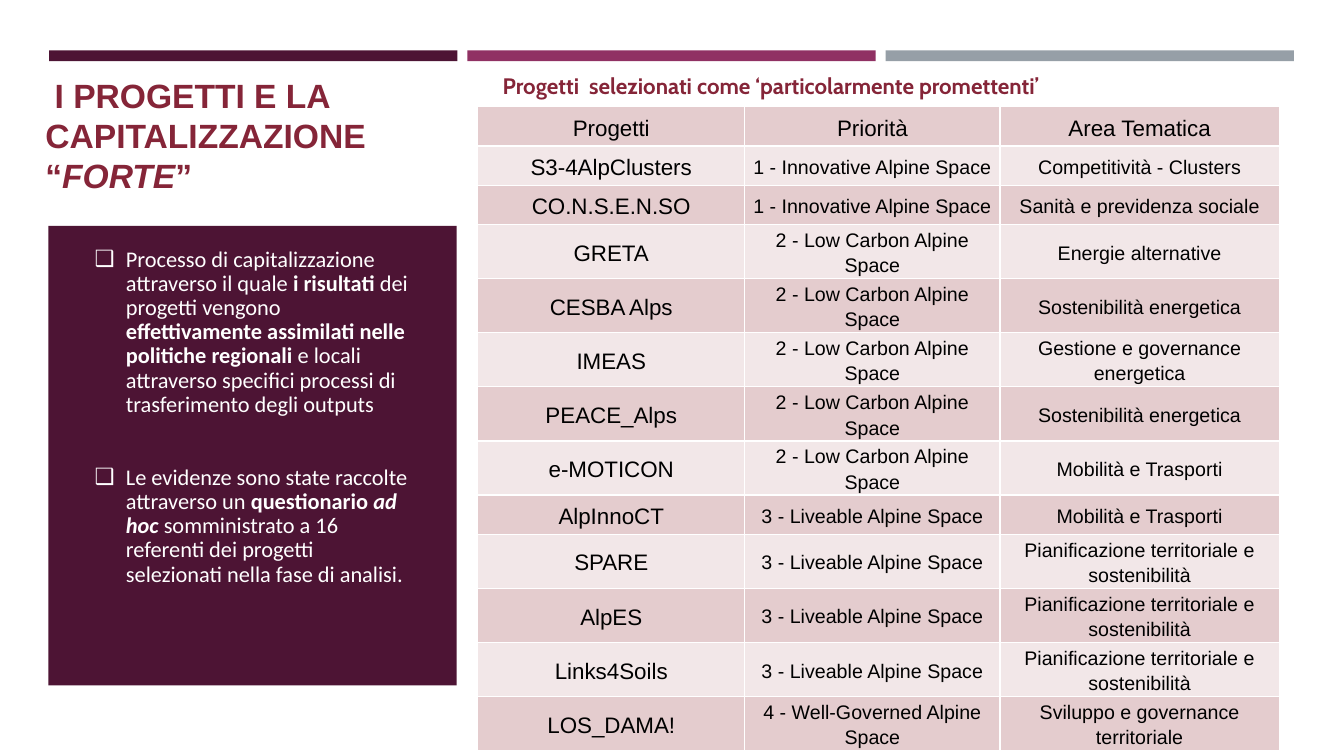
from lxml import etree
from pptx import Presentation
from pptx.dml.color import RGBColor
from pptx.enum.shapes import MSO_SHAPE
from pptx.enum.text import MSO_ANCHOR, MSO_AUTO_SIZE, PP_ALIGN
from pptx.oxml.ns import qn
from pptx.util import Cm, Pt

WHITE = RGBColor(0xFF, 0xFF, 0xFF)
BLACK = RGBColor(0x00, 0x00, 0x00)
PLUM = RGBColor(0x4D, 0x14, 0x34)
MAGENTA = RGBColor(0x90, 0x31, 0x63)
GREY = RGBColor(0x96, 0x9F, 0xA7)
CRIMSON = RGBColor(0x85, 0x25, 0x38)
DARK_ROW = RGBColor(0xE4, 0xCC, 0xCE)
LIGHT_ROW = RGBColor(0xF2, 0xE7, 0xE8)


def set_font(paragraph, name, size, color, bold=False):
    font = paragraph.font
    font.name = name
    font.size = Pt(size)
    font.bold = bold
    font.color.rgb = color


def add_rectangle(left, top, width, height, color):
    shape = slide.shapes.add_shape(
        MSO_SHAPE.RECTANGLE, Cm(left), Cm(top), Cm(width), Cm(height))
    shape.shadow.inherit = False
    shape.fill.solid()
    shape.fill.fore_color.rgb = color
    shape.line.fill.background()
    return shape


presentation = Presentation()
presentation.slide_width = Cm(33.87)
presentation.slide_height = Cm(19.05)
slide = presentation.slides.add_slide(presentation.slide_layouts[1])
slide.background.fill.solid()
slide.background.fill.fore_color.rgb = WHITE
title, body = slide.placeholders

# Coloured bars and the panel behind the list
for index, color in enumerate([PLUM, MAGENTA, GREY]):
    add_rectangle(1.24 + index * 10.54, 1.27, 10.29, 0.27, color)
panel = add_rectangle(1.22, 5.69, 10.29, 11.58, PLUM)
body.element.addprevious(panel.element)

# Title
title.left, title.top, title.width, title.height = Cm(0.89), Cm(1.75), Cm(10.26), Cm(3.94)
title.text_frame.vertical_anchor = MSO_ANCHOR.TOP
title.text_frame.auto_size = MSO_AUTO_SIZE.NONE
paragraph = title.text_frame.paragraphs[0]
paragraph.alignment = PP_ALIGN.LEFT
set_font(paragraph, "Arial", 24, CRIMSON, bold=True)
for text, italic in [(" I PROGETTI E LA CAPITALIZZAZIONE “", False), ("FORTE", True), ("”", False)]:
    run = paragraph.add_run()
    run.text = text
    run.font.italic = italic

# List: each run is text, bold, italic
list_items = [
    [("Processo di capitalizzazione attraverso il quale ", False, False),
     ("i risultati ", True, False),
     ("dei progetti vengono ", False, False),
     ("effettivamente assimilati nelle politiche regionali ", True, False),
     ("e locali attraverso specifici processi di trasferimento degli outputs", False, False)],
    [("Le evidenze sono state raccolte attraverso un ", False, False),
     ("questionario ", True, False),
     ("ad hoc ", True, True),
     ("somministrato a 16 referenti dei progetti selezionati nella fase di analisi.", False, False)],
]
body.left, body.top, body.width, body.height = Cm(2.13), Cm(6.12), Cm(8.43), Cm(10.72)
frame = body.text_frame
frame.auto_size = MSO_AUTO_SIZE.NONE
for index, item in enumerate(list_items):
    paragraph = frame.add_paragraph() if index else frame.paragraphs[0]
    paragraph.line_spacing = 0.9
    paragraph.space_before = Pt(35 * index)
    properties = paragraph._p.get_or_add_pPr()
    properties.set("marL", str(Cm(0.79)))
    properties.set("indent", str(-Cm(0.79)))
    bullet_color = etree.SubElement(properties, qn("a:buClr"))
    etree.SubElement(bullet_color, qn("a:srgbClr"), val=str(WHITE))
    etree.SubElement(properties, qn("a:buChar"), char="❑")
    set_font(paragraph, "Calibri", 16, WHITE)
    for text, bold, italic in item:
        run = paragraph.add_run()
        run.text = text
        run.font.bold = bold
        run.font.italic = italic

# Table caption
caption = slide.shapes.add_textbox(Cm(12.42), Cm(1.7), Cm(19.35), Cm(0.99))
caption.text_frame.word_wrap = True
paragraph = caption.text_frame.paragraphs[0]
paragraph.text = "Progetti  selezionati come ‘particolarmente promettenti’"
set_font(paragraph, "Cabin", 16, CRIMSON, bold=True)

# Project table
INNOVATIVE = "1 - Innovative Alpine Space"
LOW_CARBON = "2 - Low Carbon Alpine Space"
LIVEABLE = "3 - Liveable Alpine Space"
PLANNING = "Pianificazione territoriale e sostenibilità"
rows = [
    ("Progetti", "Priorità", "Area Tematica"),
    ("S3-4AlpClusters", INNOVATIVE, "Competitività - Clusters"),
    ("CO.N.S.E.N.SO", INNOVATIVE, "Sanità e previdenza sociale"),
    ("GRETA", LOW_CARBON, "Energie alternative"),
    ("CESBA Alps", LOW_CARBON, "Sostenibilità energetica"),
    ("IMEAS", LOW_CARBON, "Gestione e governance energetica"),
    ("PEACE_Alps", LOW_CARBON, "Sostenibilità energetica"),
    ("e-MOTICON", LOW_CARBON, "Mobilità e Trasporti"),
    ("AlpInnoCT", LIVEABLE, "Mobilità e Trasporti"),
    ("SPARE", LIVEABLE, PLANNING),
    ("AlpES", LIVEABLE, PLANNING),
    ("Links4Soils", LIVEABLE, PLANNING),
    ("LOS_DAMA!", "4 - Well-Governed Alpine Space", "Sviluppo e governance territoriale"),
]
column_widths = [6.73, 6.43, 7.04]
row_height = 0.99
table = slide.shapes.add_table(
    len(rows), len(column_widths), Cm(12.04), Cm(2.69),
    Cm(sum(column_widths)), Cm(row_height * len(rows))).table
table.first_row = False
table.horz_banding = False
for column, width in zip(table.columns, column_widths):
    column.width = Cm(width)
for row_index, row in enumerate(rows):
    table.rows[row_index].height = Cm(row_height)
    for column_index, text in enumerate(row):
        cell = table.cell(row_index, column_index)
        cell.vertical_anchor = MSO_ANCHOR.MIDDLE
        cell.margin_left = cell.margin_right = Cm(0.18)
        cell.margin_top = cell.margin_bottom = 0
        cell_properties = cell._tc.get_or_add_tcPr()
        for side in ("a:lnL", "a:lnR", "a:lnT", "a:lnB"):
            border = etree.SubElement(cell_properties, qn(side), w=str(Pt(1)))
            border_fill = etree.SubElement(border, qn("a:solidFill"))
            etree.SubElement(border_fill, qn("a:srgbClr"), val=str(WHITE))
        cell.fill.solid()
        cell.fill.fore_color.rgb = LIGHT_ROW if row_index % 2 else DARK_ROW
        paragraph = cell.text_frame.paragraphs[0]
        paragraph.text = text
        paragraph.alignment = PP_ALIGN.CENTER
        paragraph.line_spacing = 1.15
        is_large = row_index == 0 or column_index == 0
        set_font(paragraph, "Arial", 16 if is_large else 14, BLACK)

presentation.save("out.pptx")
